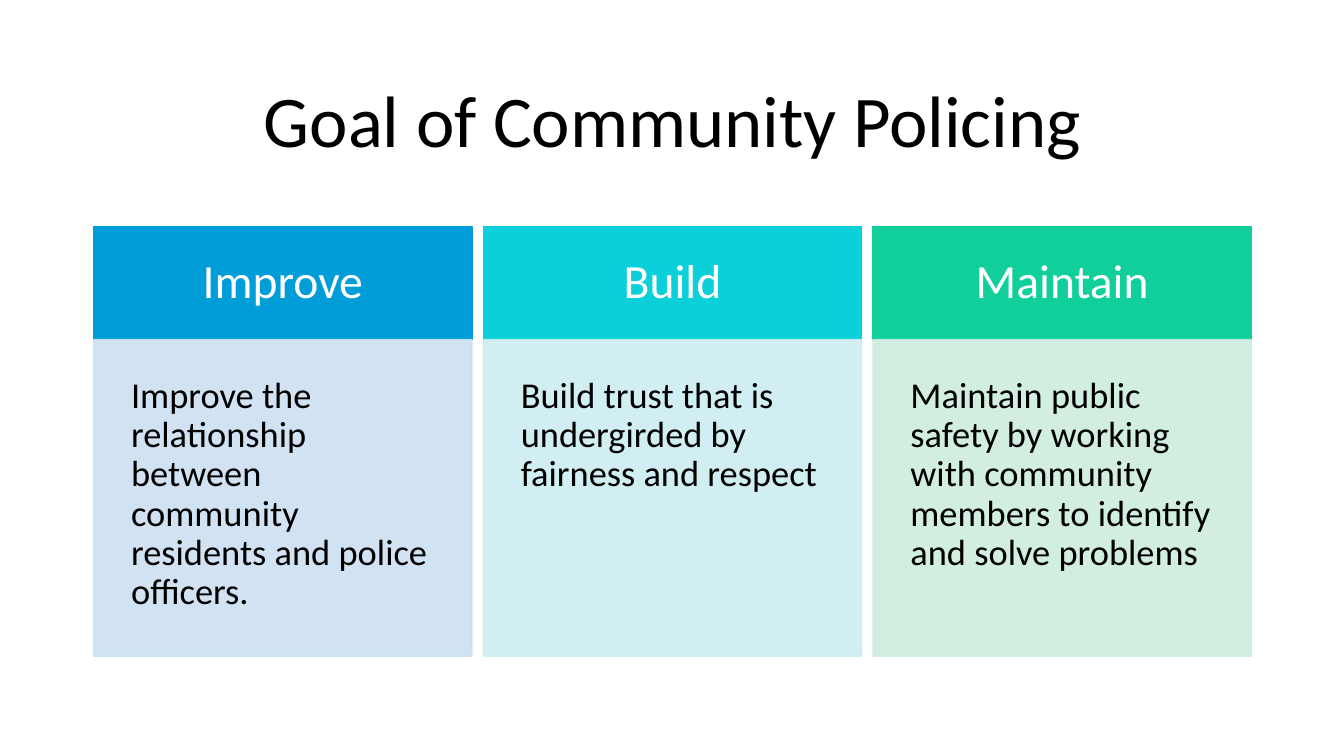
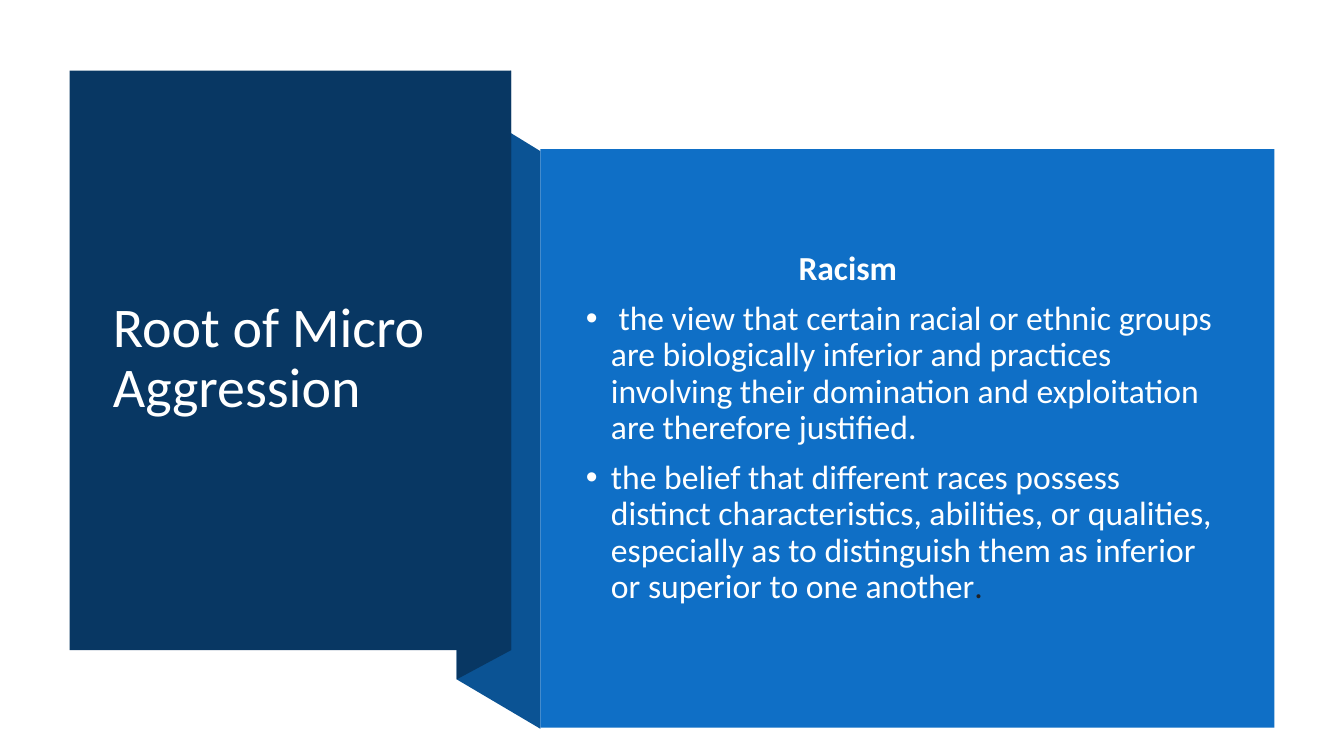
from lxml import etree
from pptx import Presentation
from pptx.dml.color import RGBColor
from pptx.enum import shapes, text
from pptx.oxml import ns
from pptx.util import Inches, Pt

FONT = "Calibri"
COLORS = {
    "black": "000000", "white": "FFFFFF", "soft_white": "FEFFFF", "ink": "202124",
    "navy": "083763", "fold": "0B5394", "panel": "0F6FC6",
    "blue": "009DD9", "blue_tint": "CCDFF1",
    "cyan": "0BD0D9", "cyan_tint": "CCEEF1",
    "green": "10CF9B", "green_tint": "CCEDDE",
}
TITLE_ONLY, TITLE_AND_CONTENT = 5, 1


def rgb(name):
    return RGBColor.from_string(COLORS[name])


def set_alpha(shape, percent):
    """Give every solid colour of the shape the same opacity."""
    for color in shape.element.spPr.iter(ns.qn("a:srgbClr")):
        etree.SubElement(color, ns.qn("a:alpha")).set("val", str(percent * 1000))


def paint(shape, color, outlined=False):
    shape.shadow.inherit = False
    shape.fill.solid()
    shape.fill.fore_color.rgb = rgb(color)
    if outlined:
        shape.line.color.rgb = rgb(color)
        shape.line.width = Pt(1)
    else:
        shape.line.fill.background()
    return shape


def add_rectangle(page, box, color, outlined=False):
    lengths = [Inches(value) for value in box]
    return paint(page.shapes.add_shape(shapes.MSO_SHAPE.RECTANGLE, *lengths), color, outlined)


def add_outline(page, points, color):
    corners = [(Inches(x), Inches(y)) for x, y in points]
    builder = page.shapes.build_freeform(*corners[0], scale=1.0)
    builder.add_line_segments(corners[1:], close=True)
    return paint(builder.convert_to_shape(), color)


def set_up_frame(shape, anchor="MIDDLE", inset=None):
    frame = shape.text_frame
    frame.word_wrap = True
    frame.auto_size = text.MSO_AUTO_SIZE.NONE
    frame.vertical_anchor = getattr(text.MSO_ANCHOR, anchor)
    if inset is not None:
        frame.margin_left = frame.margin_right = Inches(inset)
        frame.margin_top = frame.margin_bottom = Inches(inset)
    return frame


def write(para, content, size, color, bold=False, align="LEFT", before=0):
    """Append a formatted span to a paragraph."""
    para.alignment = getattr(text.PP_ALIGN, align)
    para.line_spacing = 0.9
    para.space_before = Pt(before)
    span = para.add_run()
    span.text = content
    span.font.name = FONT
    span.font.size = Pt(size)
    span.font.bold = bold
    span.font.color.rgb = rgb(color)


def set_list_style(para, left, first=0, bullet=None):
    props = para._p.get_or_add_pPr()
    props.set("marL", str(Inches(left)))
    props.set("indent", str(Inches(first)))
    if bullet:
        etree.SubElement(props, ns.qn("a:buFont")).set("typeface", "Arial")
        etree.SubElement(props, ns.qn("a:buChar")).set("char", bullet)
    else:
        etree.SubElement(props, ns.qn("a:buNone"))


def place(holder, box):
    """Move a placeholder to its box and in front of what is drawn so far."""
    holder.left, holder.top, holder.width, holder.height = (Inches(v) for v in box)
    holder.element.getparent().append(holder.element)
    return set_up_frame(holder)


def set_title(page, box, content, size, color, align="LEFT"):
    frame = place(page.shapes.title, box)
    write(frame.paragraphs[0], content, size, color, align=align)


def add_goal_card(page, box, heading, detail, color):
    left, top, width, height = box
    head_height = 1.12
    # Heading band
    head = add_rectangle(page, (left, top, width, head_height), color, outlined=True)
    frame = set_up_frame(head, inset=0.3)
    write(frame.paragraphs[0], heading, 34, "white", align="CENTER")
    # Tinted detail area
    area = (left, top + head_height, width, height - head_height)
    body = add_rectangle(page, area, color + "_tint", outlined=True)
    set_alpha(body, 90)
    frame = set_up_frame(body, anchor="TOP", inset=0.37)
    write(frame.paragraphs[0], detail, 26, "black")


def add_goals_slide(deck, title, goals):
    page = deck.slides.add_slide(deck.slide_layouts[TITLE_ONLY])
    set_title(page, (0.92, 0.61, 11.5, 1.24), title, 52, "black", align="CENTER")
    left, top, width, height, total = 0.93, 2.25, 3.75, 4.26, 11.48
    step = (total - width) / (len(goals) - 1)
    for index, goal in enumerate(goals):
        add_goal_card(page, (left + index * step, top, width, height), *goal)


def add_ribbon(page, box, panel):
    """Draw the title block and the folds that join it to the panel."""
    left, top, width, height = box
    right, bottom = left + width, top + height
    panel_left, panel_top, _, panel_height = panel
    fold_left, rise = 4.53, 0.29
    fold_top, fold_bottom = top + rise, bottom + rise
    add_outline(page, [(panel_left, panel_top + panel_height + 0.01), (fold_left, fold_bottom),
                       (fold_left, fold_top), (panel_left, panel_top + 0.02)], "fold")
    add_outline(page, [(right, bottom), (fold_left, fold_bottom),
                       (fold_left, fold_top), (right, top)], "navy")
    add_rectangle(page, box, "navy")


def add_definition_slide(deck, title, term, meanings):
    page = deck.slides.add_slide(deck.slide_layouts[TITLE_AND_CONTENT])
    body = page.placeholders[1]
    panel = (5.36, 1.48, 7.28, 5.74)
    add_ribbon(page, (0.69, 0.7, 4.38, 5.75), panel)
    set_title(page, (1.02, 1.07, 3.71, 4.99), title, 40, "white")
    add_rectangle(page, panel, "panel")
    # Term, then its meanings as a list
    frame = place(body, (5.71, 1.88, 6.51, 4.74))
    para = frame.paragraphs[0]
    write(para, term, 24, "soft_white", bold=True, before=10)
    set_list_style(para, left=2.11)
    for spans in meanings:
        para = frame.add_paragraph()
        for content, color in spans:
            write(para, content, 24, color, before=10)
        set_list_style(para, left=0.25, first=-0.25, bullet="•")


def main():
    deck = Presentation()
    deck.slide_width, deck.slide_height = Inches(13.33), Inches(7.5)
    add_goals_slide(deck, "Goal of Community Policing", [
        ("Improve", "Improve the relationship between community residents "
                    "and police officers.", "blue"),
        ("Build", "Build trust that is undergirded by fairness and respect", "cyan"),
        ("Maintain", "Maintain public safety by working with community members "
                     "to identify and solve problems", "green"),
    ])
    add_definition_slide(deck, "Root of Micro Aggression", "Racism", [
        [(" the view that certain racial or ethnic groups are biologically inferior "
          "and practices involving their domination and exploitation are therefore "
          "justified.", "soft_white")],
        [("the belief that different races possess distinct characteristics, abilities, "
          "or qualities, especially as to distinguish them as inferior or superior "
          "to one another", "white"), (".", "ink")],
    ])
    deck.save("out.pptx")


if __name__ == "__main__":
    main()
